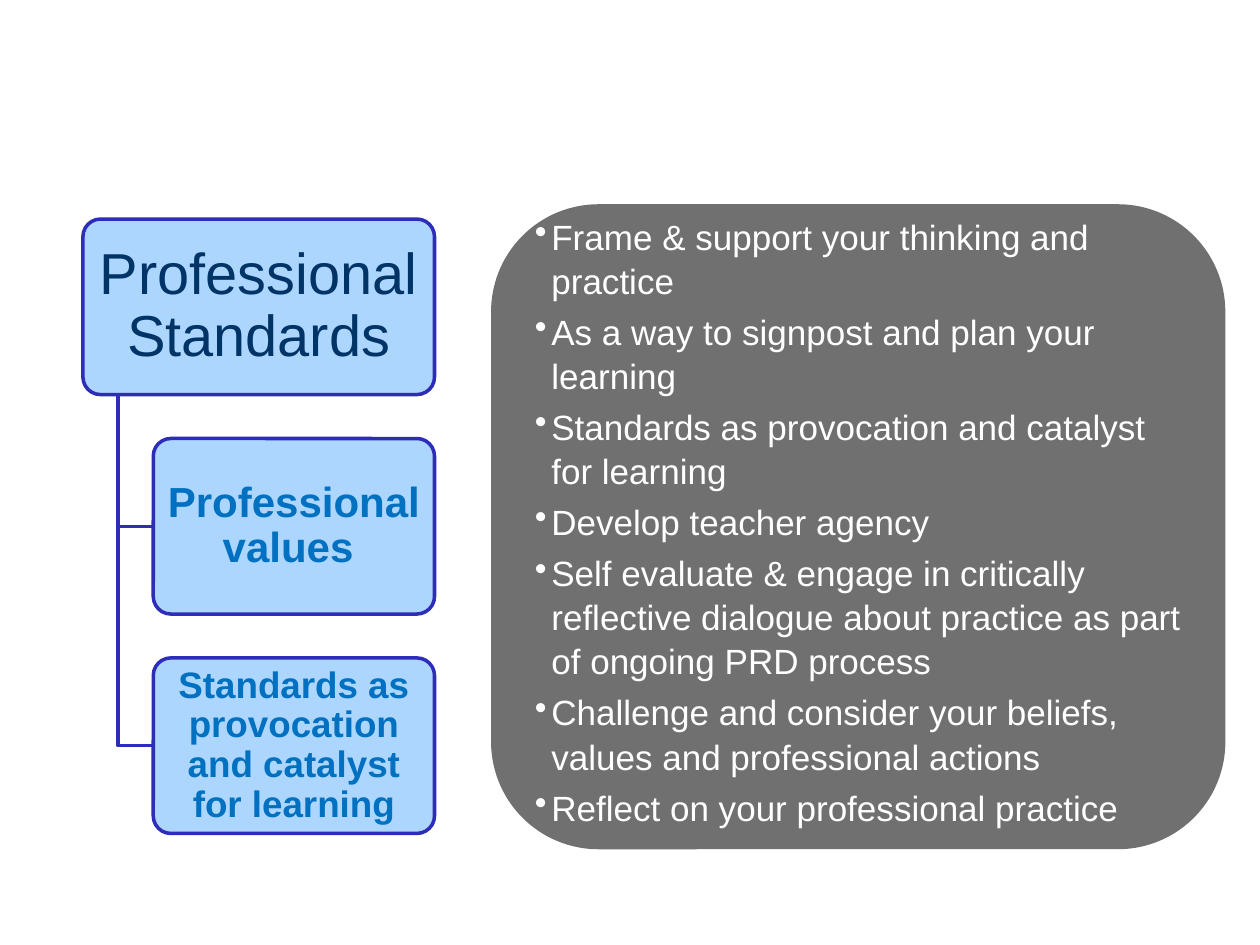
"""Build the professional standards slide: a small hierarchy beside a bullet panel."""
import pptx
import pptx.util
import pptx.dml.color
import pptx.enum.shapes
import pptx.enum.text
from lxml import etree

Pt = pptx.util.Pt
ROUND = pptx.enum.shapes.MSO_SHAPE.ROUNDED_RECTANGLE
ALIGN = pptx.enum.text.PP_ALIGN

BOXES = [
    ("Professional Standards", 33, "003366", False, 5, 3.6),
    ("Professional values ", 24, "0070C0", True, 3.6, 2.16),
    ("Standards as provocation and catalyst for learning", 21, "0070C0", True, 2.88, 2.16),
]
BULLETS = [
    "Frame & support your thinking and practice",
    "As a way to signpost and plan your learning",
    "Standards as provocation and catalyst for learning",
    "Develop teacher agency",
    "Self evaluate & engage in critically reflective dialogue about practice as part of ongoing PRD process",
    "Challenge and consider your beliefs, values and professional actions",
    "Reflect on your professional practice",
]
LEFT, TOP, RIGHT, HEIGHT, PITCH, STEP = 47.4, 125.2, 248.3, 100.3, 125.4, 20.1
PANEL = (280.6, 116.7, 419.6, 368.6)
FILL, LINE, PANEL_FILL, WHITE = "ADD6FF", "2D2DB9", "707070", "FFFFFF"


def rgb(value):
    return pptx.dml.color.RGBColor.from_string(value)


def outline(sp):
    sp.shadow.inherit = False
    sp.line.color.rgb = rgb(LINE)
    sp.line.width = Pt(2)


def add_round(s, x, y, w, h, fill, insets):
    sp = s.shapes.add_shape(ROUND, Pt(x), Pt(y), Pt(w), Pt(h))
    sp.shadow.inherit = False
    sp.fill.solid()
    sp.fill.fore_color.rgb = rgb(fill)
    tf = sp.text_frame
    tf.word_wrap = True
    tf.vertical_anchor = pptx.enum.text.MSO_ANCHOR.MIDDLE
    tf.margin_left, tf.margin_top, tf.margin_right, tf.margin_bottom = map(Pt, insets)
    return sp


def add_run(p, text, size, color, bold=False):
    r = p.add_run()
    r.text = text
    r.font.name = "Arial"
    r.font.size = Pt(size)
    r.font.bold = bold
    r.font.color.rgb = rgb(color)


def add_elbow(s, y):
    x = LEFT + STEP
    builder = s.shapes.build_freeform(Pt(x), Pt(TOP + HEIGHT))
    builder.add_line_segments([(Pt(x), Pt(y)), (Pt(x + STEP), Pt(y))], close=False)
    sp = builder.convert_to_shape()
    sp.fill.background()
    outline(sp)


def add_hierarchy(s):
    for i, (text, size, color, bold, side, edge) in enumerate(BOXES):
        x, y = LEFT + (2 * STEP if i else 0), TOP + i * PITCH
        if i:
            add_elbow(s, y + HEIGHT / 2)
        sp = add_round(s, x, y, RIGHT - x, HEIGHT, FILL, (side, edge, side, edge))
        sp.adjustments[0] = 0.1
        outline(sp)
        p = sp.text_frame.paragraphs[0]
        p.alignment = ALIGN.CENTER
        p.line_spacing = 0.9
        add_run(p, text, size, color, bold)


def add_panel(s):
    sp = add_round(s, *PANEL, PANEL_FILL, (7.2, 3.6, 7.2, 10.6))
    sp.line.fill.background()
    tf = sp.text_frame
    for i, text in enumerate(BULLETS):
        p = tf.add_paragraph() if i else tf.paragraphs[0]
        p.alignment = ALIGN.LEFT
        p.line_spacing = 1.05
        p.space_before = Pt(4 if i else 0)
        pPr = p._p.get_or_add_pPr()
        pPr.set("marL", str(Pt(9.4)))
        pPr.set("indent", str(-Pt(9.4)))
        bullet = etree.SubElement(pPr, pptx.oxml.ns.qn("a:buChar"))
        bullet.set("char", "•")
        add_run(p, text, 20, WHITE)


def main():
    prs = pptx.Presentation()
    prs.slide_width, prs.slide_height = Pt(720), Pt(540)
    s = prs.slides.add_slide(prs.slide_layouts[6])
    add_hierarchy(s)
    add_panel(s)
    prs.save("out.pptx")


if __name__ == "__main__":
    main()
